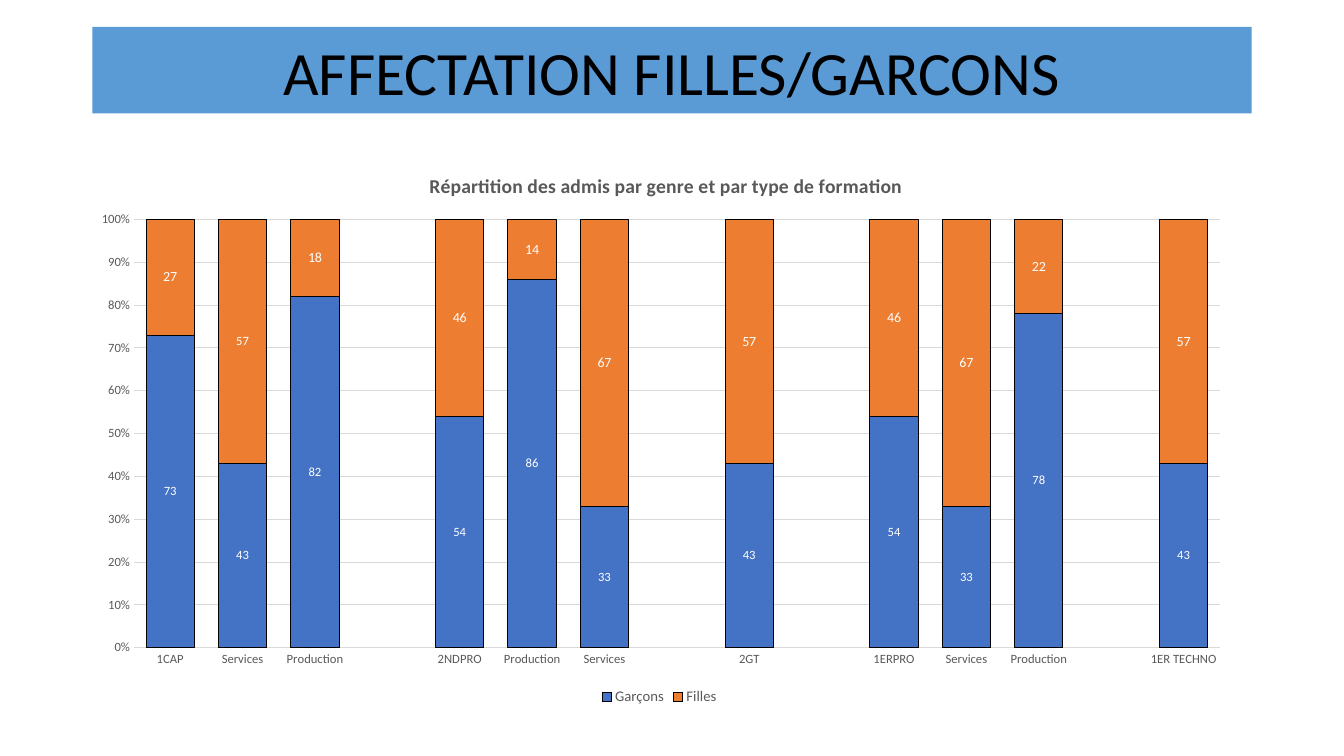
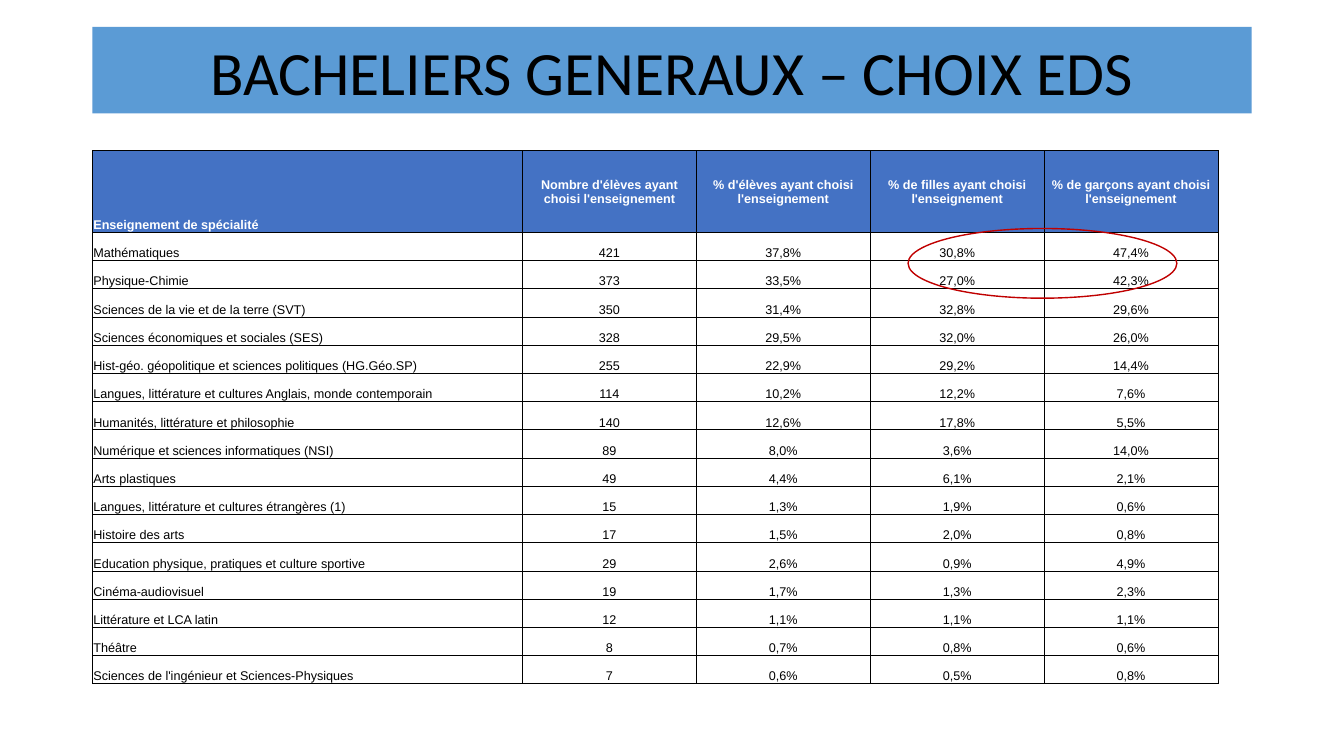
import pptx
import pptx.chart.data
import pptx.dml.color
import pptx.enum.chart
import pptx.enum.shapes
import pptx.enum.text
import pptx.oxml
import pptx.oxml.ns
import pptx.util

BAND_BLUE = pptx.dml.color.RGBColor(0x5B, 0x9B, 0xD5)
BLUE = pptx.dml.color.RGBColor(0x44, 0x72, 0xC4)
ORANGE = pptx.dml.color.RGBColor(0xED, 0x7D, 0x31)
RED = pptx.dml.color.RGBColor(0xC0, 0x00, 0x00)
GREY = pptx.dml.color.RGBColor(0x59, 0x59, 0x59)
LIGHT_GREY = pptx.dml.color.RGBColor(0xD9, 0xD9, 0xD9)
BLACK = pptx.dml.color.RGBColor(0x00, 0x00, 0x00)
WHITE = pptx.dml.color.RGBColor(0xFF, 0xFF, 0xFF)
ALIGN = pptx.enum.text.PP_ALIGN
ANCHOR = pptx.enum.text.MSO_ANCHOR


def set_font(font, name, size, color, bold=False):
    font.name = name
    font.size = pptx.util.Pt(size)
    font.color.rgb = color
    font.bold = bold


def set_chart_layout(parent, index, **shares):
    tag = pptx.oxml.ns.qn("c:layout")
    for layout in parent.findall(tag):
        parent.remove(layout)
    target = '<c:layoutTarget val="inner"/>' if "w" in shares else ""
    modes = "".join(f'<c:{key}Mode val="edge"/>' for key in "xy")
    values = "".join(f'<c:{key} val="{value}"/>' for key, value in shares.items())
    parent.insert(index, pptx.oxml.parse_xml(
        f'<c:layout {pptx.oxml.ns.nsdecls("c")}><c:manualLayout>'
        f"{target}{modes}{values}</c:manualLayout></c:layout>"))


presentation = pptx.Presentation()
presentation.slide_width = pptx.util.Inches(13.333)
presentation.slide_height = pptx.util.Inches(7.5)
column = presentation.slide_width / 160
row = presentation.slide_height / 90
left = int(11 * column)

slides = []
for title_text in ("AFFECTATION FILLES/GARCONS", "BACHELIERS GENERAUX – CHOIX EDS"):
    slide = presentation.slides.add_slide(presentation.slide_layouts[5])
    title = slide.shapes.title
    title.left, title.top = left, int(3.2 * row)
    title.width, title.height = int(138 * column), int(10.3 * row)
    title.fill.solid()
    title.fill.fore_color.rgb = BAND_BLUE
    title.text_frame.text = title_text
    title.text_frame.auto_size = pptx.enum.text.MSO_AUTO_SIZE.NONE
    title.text_frame.vertical_anchor = ANCHOR.BOTTOM
    paragraph = title.text_frame.paragraphs[0]
    paragraph.alignment = ALIGN.CENTER
    paragraph.line_spacing = 0.9
    set_font(paragraph.font, "Calibri", 44, BLACK)
    slides.append(slide)
chart_slide, table_slide = slides

chart_data = pptx.chart.data.CategoryChartData(number_format="0")
chart_data.categories = [
    "1CAP", "Services", "Production", "", "2NDPRO", "Production", "Services", "",
    "2GT", "", "1ERPRO", "Services", "Production", "", "1ER TECHNO"]
boys = [73, 43, 82, None, 54, 86, 33, None, 43, None, 54, 33, 78, None, 43]
chart_data.add_series("Garçons", boys)
chart_data.add_series("Filles", [share and 100 - share for share in boys])
chart = chart_slide.shapes.add_chart(
    pptx.enum.chart.XL_CHART_TYPE.COLUMN_STACKED_100,
    int(9 * column), int(17.4 * row), int(139 * column), int(67.1 * row), chart_data).chart
set_font(chart.font, "Calibri", 10, BLACK)

chart.has_title = True
chart.chart_title.text_frame.text = "Répartition des admis par genre et par type de formation"
set_font(chart.chart_title.text_frame.paragraphs[0].font, "Calibri", 14, GREY, True)
set_chart_layout(chart.chart_title._element, 1, x=0.3, y=0.04)
set_chart_layout(chart._chartSpace.xpath("c:chart/c:plotArea")[0], 0,
                 x=0.05, y=0.13, w=0.93, h=0.76)

chart.has_legend = True
chart.legend.position = pptx.enum.chart.XL_LEGEND_POSITION.BOTTOM
chart.legend.include_in_layout = False
set_font(chart.legend.font, "Calibri", 10.5, GREY)

for axis in (chart.category_axis, chart.value_axis):
    axis.major_tick_mark = pptx.enum.chart.XL_TICK_MARK.NONE
    axis.minor_tick_mark = pptx.enum.chart.XL_TICK_MARK.NONE
    set_font(axis.tick_labels.font, "Calibri", 9, GREY)
chart.value_axis.tick_labels.number_format = "0%"
chart.value_axis.tick_labels.number_format_is_linked = False
chart.value_axis.format.line.fill.background()
chart.value_axis.has_major_gridlines = True
for line in (chart.category_axis.format.line, chart.value_axis.major_gridlines.format.line):
    line.color.rgb = LIGHT_GREY
    line.width = pptx.util.Pt(0.75)

plot = chart.plots[0]
plot.gap_width = 50
plot.overlap = 100
plot.vary_by_categories = False
for series, color, label_size in zip(plot.series, (BLUE, ORANGE), (9, 10)):
    series.format.fill.solid()
    series.format.fill.fore_color.rgb = color
    series.format.line.color.rgb = BLACK
    series.format.line.width = pptx.util.Pt(0.75)
    labels = series.data_labels
    labels.show_value = True
    labels.number_format = "0"
    labels.number_format_is_linked = False
    services_label = series.points[1].data_label
    for label, size in ((labels, label_size), (services_label, 9)):
        set_font(label.font, "Calibri", size, WHITE)
        label.position = pptx.enum.chart.XL_LABEL_POSITION.CENTER

specialities = [
    ("Enseignement de spécialité", "Nombre d'élèves ayant choisi l'enseignement",
     "% d'élèves ayant choisi l'enseignement", "% de filles ayant choisi l'enseignement",
     "% de garçons ayant choisi l'enseignement"),
    ("Mathématiques", "421", "37,8%", "30,8%", "47,4%"),
    ("Physique-Chimie", "373", "33,5%", "27,0%", "42,3%"),
    ("Sciences de la vie et de la terre (SVT)", "350", "31,4%", "32,8%", "29,6%"),
    ("Sciences économiques et sociales (SES)", "328", "29,5%", "32,0%", "26,0%"),
    ("Hist-géo. géopolitique et sciences politiques (HG.Géo.SP)",
     "255", "22,9%", "29,2%", "14,4%"),
    ("Langues, littérature et cultures Anglais, monde contemporain",
     "114", "10,2%", "12,2%", "7,6%"),
    ("Humanités, littérature et philosophie", "140", "12,6%", "17,8%", "5,5%"),
    ("Numérique et sciences informatiques (NSI)", "89", "8,0%", "3,6%", "14,0%"),
    ("Arts plastiques", "49", "4,4%", "6,1%", "2,1%"),
    ("Langues, littérature et cultures étrangères (1)", "15", "1,3%", "1,9%", "0,6%"),
    ("Histoire des arts", "17", "1,5%", "2,0%", "0,8%"),
    ("Education physique, pratiques et culture sportive", "29", "2,6%", "0,9%", "4,9%"),
    ("Cinéma-audiovisuel", "19", "1,7%", "1,3%", "2,3%"),
    ("Littérature et LCA latin", "12", "1,1%", "1,1%", "1,1%"),
    ("Théâtre", "8", "0,7%", "0,8%", "0,6%"),
    ("Sciences de l'ingénieur et Sciences-Physiques", "7", "0,6%", "0,5%", "0,8%"),
]
table = table_slide.shapes.add_table(
    len(specialities), 5, left, int(17.9 * row), int(134 * column), int(63.5 * row)).table
table.horz_banding = False
for index, table_column in enumerate(table.columns):
    table_column.width = int((20.7 if index else 51.2) * column)
for index, table_row in enumerate(table.rows):
    table_row.height = int((3.36 if index else 9.75) * row)

for row_index, texts in enumerate(specialities):
    is_header = row_index == 0
    for column_index, text in enumerate(texts):
        cell = table.cell(row_index, column_index)
        cell.text = text
        cell.margin_left = cell.margin_right = cell.margin_top = pptx.util.Inches(0.01)
        cell.margin_bottom = 0
        is_centred = column_index > 0
        cell.vertical_anchor = ANCHOR.MIDDLE if is_header and is_centred else ANCHOR.BOTTOM
        paragraph = cell.text_frame.paragraphs[0]
        paragraph.alignment = ALIGN.CENTER if is_centred else ALIGN.LEFT
        set_font(paragraph.font, "Arial", 9, WHITE if is_header else BLACK, is_header)
        properties = cell._tc.get_or_add_tcPr()
        for side in ("L", "R", "T", "B"):
            properties.append(pptx.oxml.parse_xml(
                f'<a:ln{side} {pptx.oxml.ns.nsdecls("a")} w="{pptx.util.Pt(0.5)}">'
                f'<a:solidFill><a:srgbClr val="{BLACK}"/></a:solidFill></a:ln{side}>'))
        if is_header:
            cell.fill.solid()
            cell.fill.fore_color.rgb = BLUE
        else:
            cell.fill.background()

highlight = table_slide.shapes.add_shape(
    pptx.enum.shapes.MSO_SHAPE.OVAL,
    int(108.1 * column), int(27.2 * row), int(32 * column), int(8.3 * row))
highlight.shadow.inherit = False
highlight.fill.background()
highlight.line.color.rgb = RED
highlight.line.width = pptx.util.Pt(1)

presentation.save("out.pptx")
